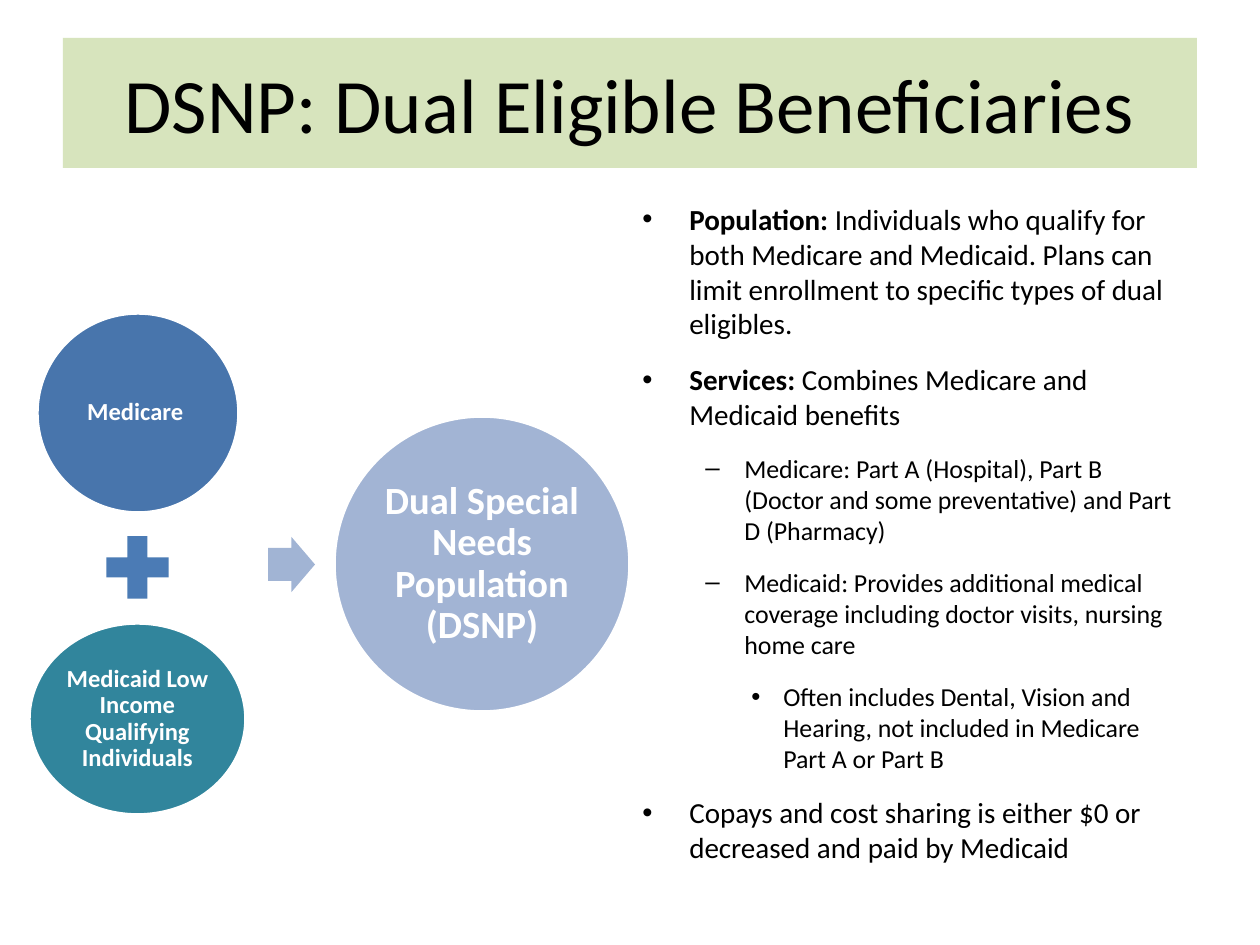
from dataclasses import dataclass

from lxml.etree import SubElement
from pptx import Presentation
from pptx.dml.color import RGBColor
from pptx.enum.shapes import MSO_SHAPE
from pptx.enum.text import MSO_ANCHOR, PP_ALIGN
from pptx.oxml.ns import qn
from pptx.util import Emu, Pt


@dataclass(frozen=True)
class Theme:
    font: str = "Calibri"
    ink: str = "000000"
    white: str = "FFFFFF"
    banner: str = "D7E4BD"
    medicare: str = "4875AC"
    plus: str = "4B7BB5"
    medicaid: str = "31859C"
    arrow: str = "A1B4D4"
    dual: str = "A2B4D4"
    title_size: float = 44
    source_size: float = 14
    dual_size: float = 22
    body_sizes: tuple = (16.6, 14.8, 14.8)


THEME = Theme()

TITLE = ("DSNP: Dual Eligible Beneficiaries", (63, 38, 1134, 130))
CIRCLES = [
    ("Medicare ", (37, 313, 202, 200), THEME.medicare, THEME.source_size, 3),
    ("Medicaid Low Income Qualifying Individuals", (29, 623, 217, 192),
     THEME.medicaid, THEME.source_size, 3),
    ("Dual Special Needs Population (DSNP)", (334, 416, 296, 296),
     THEME.dual, THEME.dual_size, 4),
]
PLUS_BOX = (95, 525, 85, 85)
ARROW_BOX = (268, 537, 47, 55)
DETAILS_BOX = (630, 195, 567, 624)
DETAILS = [
    (0, "Population: ", "Individuals who qualify for both Medicare and Medicaid. "
     "Plans can limit enrollment to specific types of dual eligibles."),
    (0, "Services: ", "Combines Medicare and Medicaid benefits"),
    (1, "", "Medicare: Part A (Hospital), Part B (Doctor and some preventative) "
     "and Part D (Pharmacy)"),
    (1, "", "Medicaid: Provides additional medical coverage including doctor visits, "
     "nursing home care"),
    (2, "", "Often includes Dental, Vision and Hearing, not included in Medicare "
     "Part A or Part B"),
    (0, "", "Copays and cost sharing is either $0 or decreased and paid by Medicaid"),
]
LEVELS = [("•", 47, 47), ("–", 102, 39), ("•", 141, 32)]


def px(length):
    return Emu(round(length * 914400 / 126))


def write(paragraph, text, *, size, color=THEME.ink, lead="", bold=False,
          align=PP_ALIGN.LEFT, spacing=None, after=0, level=None):
    if level is not None:
        mark, margin, hang = LEVELS[level]
        paragraph.level = level
        properties = paragraph._p.get_or_add_pPr()
        properties.set("marL", str(px(margin)))
        properties.set("indent", str(-px(hang)))
        SubElement(properties, qn("a:buFont"), typeface="Arial")
        SubElement(properties, qn("a:buChar"), char=mark)
    paragraph.alignment = align
    paragraph.line_spacing = spacing
    paragraph.space_after = Pt(after)
    for words, strong in ((lead, True), (text, bold)):
        if words:
            run = paragraph.add_run()
            run.text = words
            run.font.name = THEME.font
            run.font.size = Pt(size)
            run.font.bold = strong
            run.font.color.rgb = RGBColor.from_string(color)


def draw(slide, kind, box, fill, outline=None):
    shape = slide.shapes.add_shape(kind, *map(px, box))
    shape.shadow.inherit = False
    shape.fill.solid()
    shape.fill.fore_color.rgb = RGBColor.from_string(fill)
    if outline:
        shape.line.color.rgb = RGBColor.from_string(outline)
        shape.line.width = Pt(2)
    else:
        shape.line.fill.background()
    return shape


def main():
    deck = Presentation()
    deck.slide_width, deck.slide_height = px(1260), px(945)
    slide = deck.slides.add_slide(deck.slide_layouts[6])

    title, title_box = TITLE
    banner = draw(slide, MSO_SHAPE.RECTANGLE, title_box, THEME.banner)
    banner.text_frame.word_wrap = True
    banner.text_frame.vertical_anchor = MSO_ANCHOR.MIDDLE
    write(banner.text_frame.paragraphs[0], title, size=THEME.title_size,
          align=PP_ALIGN.CENTER)

    details = slide.shapes.add_textbox(*map(px, DETAILS_BOX)).text_frame
    details.word_wrap = True
    for index, (level, lead, text) in enumerate(DETAILS):
        paragraph = details.add_paragraph() if index else details.paragraphs[0]
        write(paragraph, text, lead=lead, level=level,
              size=THEME.body_sizes[level], after=12)

    for label, box, fill, size, inset in CIRCLES:
        circle = draw(slide, MSO_SHAPE.OVAL, box, fill, THEME.white)
        frame = circle.text_frame
        frame.word_wrap = True
        frame.vertical_anchor = MSO_ANCHOR.MIDDLE
        frame.margin_left = frame.margin_right = px(inset)
        frame.margin_top = frame.margin_bottom = px(inset)
        write(frame.paragraphs[0], label, size=size, color=THEME.white,
              bold=True, align=PP_ALIGN.CENTER, spacing=0.9)

    draw(slide, MSO_SHAPE.MATH_PLUS, PLUS_BOX, THEME.plus)
    arrow = draw(slide, MSO_SHAPE.RIGHT_ARROW, ARROW_BOX, THEME.arrow)
    arrow.adjustments[0] = 0.6
    arrow.adjustments[1] = 0.5

    deck.save("out.pptx")


if __name__ == "__main__":
    main()
